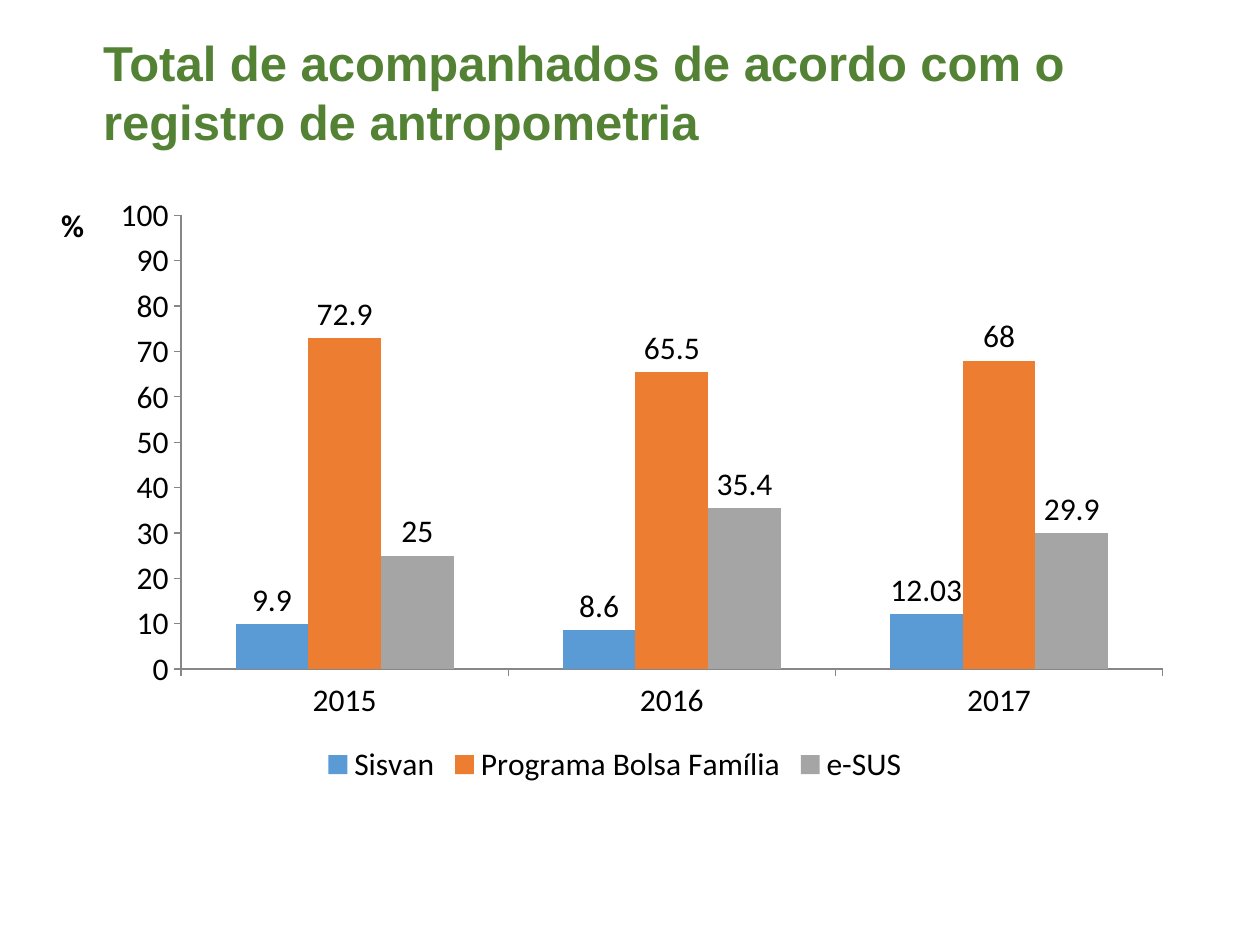
from pptx import Presentation
from pptx.chart.data import CategoryChartData
from pptx.dml.color import RGBColor
from pptx.enum.chart import (XL_CHART_TYPE as ChartType, XL_LABEL_POSITION as LabelPosition,
                             XL_LEGEND_POSITION as LegendPosition, XL_TICK_MARK as TickMark)
from pptx.oxml import parse_xml
from pptx.oxml.ns import nsdecls, qn
from pptx.util import Inches, Pt

COLORS = {"title": "548235", "text": "000000", "axis": "878787",
          "Sisvan": "5B9BD5", "Programa Bolsa Família": "ED7D31", "e-SUS": "A5A5A5"}
VALUES = {"Sisvan": (9.9, 8.6, 12.03),
          "Programa Bolsa Família": (72.9, 65.5, 68),
          "e-SUS": (25, 35.4, 29.9)}


def write_text(text_frame, text, font="Calibri", size=18, color="text", bold=False):
    run = text_frame.paragraphs[0].add_run()
    run.text = text
    run.font.name = font
    run.font.size = Pt(size)
    run.font.bold = bold
    run.font.color.rgb = RGBColor.from_string(COLORS[color])


def set_layout(element, index, target="", **fractions):
    """Place a chart part by fractions of the chart area."""
    for old in element.findall(qn("c:layout")):
        element.remove(old)
    tags = f'<c:layoutTarget val="{target}"/>' if target else ""
    tags += "".join(f'<c:{key}Mode val="edge"/>' for key in "xy")
    tags += "".join(f'<c:{key} val="{value}"/>' for key, value in fractions.items())
    element.insert(index, parse_xml(
        f'<c:layout {nsdecls("c")}><c:manualLayout>{tags}</c:manualLayout></c:layout>'))


presentation = Presentation()
presentation.slide_width, presentation.slide_height = Inches(10), Inches(7.5)
slide = presentation.slides.add_slide(presentation.slide_layouts[6])

# Title
title = slide.shapes.add_textbox(Inches(0.72), Inches(0.21), Inches(8.92), Inches(1.04))
title.text_frame.word_wrap = True
write_text(title.text_frame, "Total de acompanhados de acordo com o registro de antropometria",
           font="Arial", size=28, color="title", bold=True)

# Column chart
data = CategoryChartData()
data.categories = ["2015", "2016", "2017"]
for name, values in VALUES.items():
    data.add_series(name, values)
chart = slide.shapes.add_chart(ChartType.COLUMN_CLUSTERED, Inches(0.35), Inches(1.47),
                               Inches(9.06), Inches(4.8), data).chart
chart.has_title = False
chart.font.name = "Calibri"
chart.font.size = Pt(18)
chart.font.color.rgb = RGBColor.from_string(COLORS["text"])
plot = chart.plots[0]
plot.gap_width = 150
plot.overlap = 0
plot.vary_by_categories = False
set_layout(chart.element.find(".//" + qn("c:plotArea")), 0, "inner",
           x=0.12, y=0.05, w=0.86, h=0.75)

# Series and their value labels
for series in plot.series:
    series.format.fill.solid()
    series.format.fill.fore_color.rgb = RGBColor.from_string(COLORS[series.name])
    labels = series.data_labels
    labels.show_value = True
    labels.position = LabelPosition.OUTSIDE_END
    labels.font.size = Pt(18)

# Axes
for axis in (chart.category_axis, chart.value_axis):
    axis.has_major_gridlines = False
    axis.major_tick_mark = TickMark.OUTSIDE
    axis.minor_tick_mark = TickMark.NONE
    axis.tick_labels.font.size = Pt(18)
    axis.format.line.color.rgb = RGBColor.from_string(COLORS["axis"])
    axis.format.line.width = Pt(0.75)
value_axis = chart.value_axis
value_axis.minimum_scale, value_axis.maximum_scale, value_axis.major_unit = 0, 100, 10

# Upright percent sign beside the top of the value axis
axis_title = value_axis.axis_title
write_text(axis_title.text_frame, "%", bold=True)
title_element = value_axis._element.find(qn("c:title"))
body = title_element.find(".//" + qn("a:bodyPr"))
body.set("rot", "0")
body.set("vert", "horz")
set_layout(title_element, 1, x=0.01, y=0.02)

# Legend
chart.has_legend = True
chart.legend.position = LegendPosition.BOTTOM
chart.legend.include_in_layout = False
chart.legend.font.size = Pt(18)

presentation.save("out.pptx")
